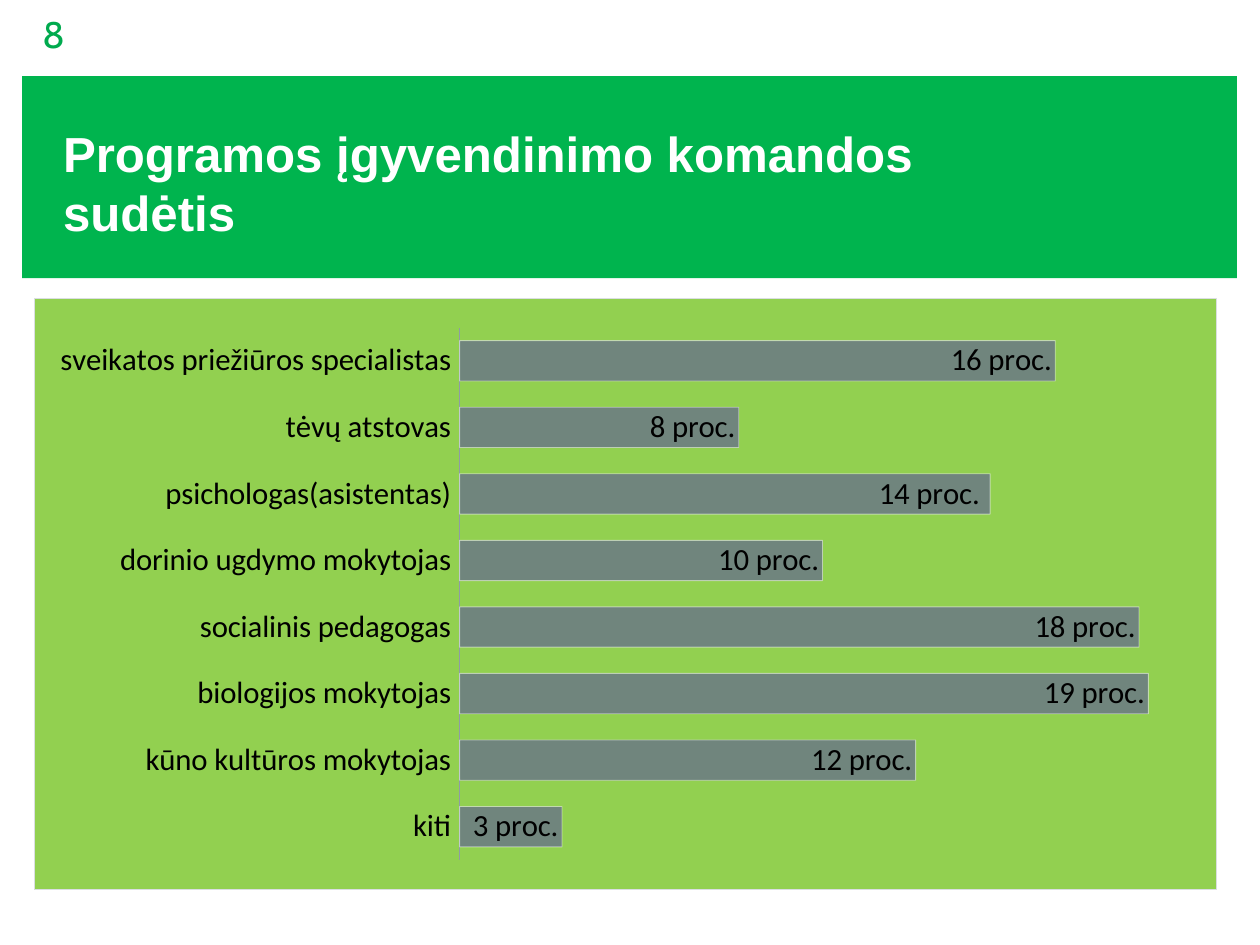
from lxml import etree
from pptx import Presentation
from pptx.chart.data import CategoryChartData
from pptx.dml.color import RGBColor
from pptx.enum.chart import XL_CHART_TYPE, XL_LABEL_POSITION, XL_TICK_LABEL_POSITION, XL_TICK_MARK
from pptx.enum.shapes import MSO_SHAPE
from pptx.enum.text import MSO_ANCHOR, MSO_AUTO_SIZE, PP_ALIGN
from pptx.oxml import parse_xml
from pptx.oxml.ns import nsdecls, qn
from pptx.util import Inches, Pt

BAR, RECT = XL_CHART_TYPE.BAR_CLUSTERED, MSO_SHAPE.RECTANGLE
INSIDE_END, LOW = XL_LABEL_POSITION.INSIDE_END, XL_TICK_LABEL_POSITION.LOW
NO_TICK = XL_TICK_MARK.NONE
BOTTOM, MIDDLE, LEFT = MSO_ANCHOR.BOTTOM, MSO_ANCHOR.MIDDLE, PP_ALIGN.LEFT
NO_FIT = MSO_AUTO_SIZE.NONE

W, H = Inches(14.22), Inches(10.67)
COLORS = {
    "band": "00B44E", "number": "00AA4E", "title": "FFFFFF", "text": "000000",
    "panel": "92D050", "border": "DADEE1", "bar": "6B7985",
    "bar_line": "FFFFFF", "axis": "8F9BA5",
}
TITLE_FONT = {"name": "Arial", "size": Pt(40), "bold": True}
NUMBER_FONT = {"name": "Cabin", "size": Pt(30)}
CHART_FONT = {"name": "Calibri", "size": Pt(25), "bold": False}

# Category, bar length, label; listed from the bottom bar up
TEAM = [
    ("kiti", 11, "3 proc."),
    ("kūno kultūros mokytojas", 49, "12 proc."),
    ("biologijos mokytojas", 74, "19 proc."),
    ("socialinis pedagogas", 73, "18 proc."),
    ("dorinio ugdymo mokytojas", 39, "10 proc."),
    ("psichologas(asistentas)", 57, "14 proc. "),
    ("tėvų atstovas", 30, "8 proc."),
    ("sveikatos priežiūros specialistas", 64, "16 proc."),
]


def rgb(key):
    return RGBColor.from_string(COLORS[key])


def box(x, y, w, h):
    """Turn percentages of the slide into left, top, width, height."""
    return [int(share * side / 100) for share, side in zip((x, y, w, h), (W, H, W, H))]


def set_attrs(obj, values):
    for name, value in values.items():
        setattr(obj, name, value)


def style_font(font, values, color):
    set_attrs(font, values)
    font.color.rgb = rgb(color)


def set_alpha(fill_or_line, percent):
    clr = next(fill_or_line.iter(qn("a:srgbClr")))
    etree.SubElement(clr, qn("a:alpha")).set("val", str(percent * 1000))


def add_title(s, text, place):
    sp = s.shapes.title
    set_attrs(sp, dict(zip(("left", "top", "width", "height"), place)))
    tf = sp.text_frame
    tf.text = text
    set_attrs(tf, {"margin_left": 0, "margin_right": 0, "margin_top": 0, "margin_bottom": 0,
                   "vertical_anchor": BOTTOM, "word_wrap": True, "auto_size": NO_FIT})
    p = tf.paragraphs[0]
    p.alignment = LEFT
    for r in p.runs:
        style_font(r.font, TITLE_FONT, "title")


def add_band(s, place):
    sp = s.shapes.add_shape(RECT, *place)
    sp.shadow.inherit = False
    sp.fill.solid()
    sp.fill.fore_color.rgb = rgb("band")
    sp.line.fill.background()
    s.shapes.title.element.addprevious(sp.element)  # keep the band behind the title


def add_number(s, text, place):
    tf = s.shapes.add_textbox(*place).text_frame
    set_attrs(tf, {"word_wrap": True, "vertical_anchor": MIDDLE})
    r = tf.paragraphs[0].add_run()
    r.text = text
    style_font(r.font, NUMBER_FONT, "number")


def style_panel(chart, layout):
    """Fill and frame the chart area and fix the inner plot area."""
    space = chart.element
    space.find(qn("c:chart")).addnext(parse_xml(
        f'<c:spPr {nsdecls("c", "a")}>'
        f'<a:solidFill><a:srgbClr val="{COLORS["panel"]}"/></a:solidFill>'
        f'<a:ln w="{Pt(0.75)}"><a:solidFill><a:srgbClr val="{COLORS["border"]}"/>'
        '</a:solidFill></a:ln></c:spPr>'))
    plot_area = next(space.iter(qn("c:plotArea")))
    for old in plot_area.findall(qn("c:layout")):
        plot_area.remove(old)
    parts = {"layoutTarget": "inner", "xMode": "edge", "yMode": "edge", **layout}
    inner = "".join(f'<c:{name} val="{value}"/>' for name, value in parts.items())
    plot_area.insert(0, parse_xml(
        f'<c:layout {nsdecls("c")}><c:manualLayout>{inner}</c:manualLayout></c:layout>'))


def style_axes(chart):
    axis = chart.category_axis
    set_attrs(axis, {"major_tick_mark": NO_TICK, "minor_tick_mark": NO_TICK,
                     "tick_label_position": LOW, "has_major_gridlines": False})
    axis.format.line.color.rgb = rgb("axis")
    axis.format.line.width = Pt(1.5)
    style_font(axis.tick_labels.font, CHART_FONT, "text")
    set_attrs(chart.value_axis, {"minimum_scale": 0, "maximum_scale": 80,
                                 "has_major_gridlines": False, "visible": False})


def style_bars(chart, labels):
    plot = chart.plots[0]
    set_attrs(plot, {"gap_width": 65, "vary_by_categories": False})
    series = plot.series[0]
    fmt = series.format
    fmt.fill.solid()
    fmt.fill.fore_color.rgb = rgb("bar")
    fmt.line.color.rgb = rgb("bar_line")
    fmt.line.width = Pt(0.75)
    sp_pr = next(chart.element.iter(qn("c:ser"))).find(qn("c:spPr"))
    set_alpha(sp_pr.find(qn("a:solidFill")), 85)
    set_alpha(sp_pr.find(qn("a:ln")), 50)
    # Percentages written at the bar ends
    set_attrs(series.data_labels, {"show_value": True, "position": INSIDE_END})
    style_font(series.data_labels.font, CHART_FONT, "text")
    for i, text in enumerate(labels):
        label = series.points[i].data_label
        r = label.text_frame.paragraphs[0].add_run()
        r.text = text
        style_font(r.font, CHART_FONT, "text")
        label.position = INSIDE_END


def add_team_chart(s, place):
    names, values, labels = zip(*TEAM)
    data = CategoryChartData()
    data.categories = names
    data.add_series("Series 1", values)
    chart = s.shapes.add_chart(BAR, *place, data).chart
    set_attrs(chart, {"has_legend": False, "has_title": False})
    style_font(chart.font, CHART_FONT, "text")
    style_panel(chart, {"x": 0.36, "y": 0.05, "w": 0.63, "h": 0.9})
    style_axes(chart)
    style_bars(chart, labels)


def main():
    prs = Presentation()
    prs.slide_width, prs.slide_height = W, H
    s = prs.slides.add_slide(prs.slide_layouts[5])
    # Heading
    add_title(s, "Programos įgyvendinimo komandos\vsudėtis", box(5, 8.62, 70.46, 16.96))
    add_band(s, box(1.76, 8.06, 96.41, 21.37))
    add_number(s, "8", box(2.67, 1.41, 4.08, 4.4))
    # Team make-up
    add_team_chart(s, box(2.67, 31.49, 93.88, 62.7))
    prs.save("out.pptx")


if __name__ == "__main__":
    main()
